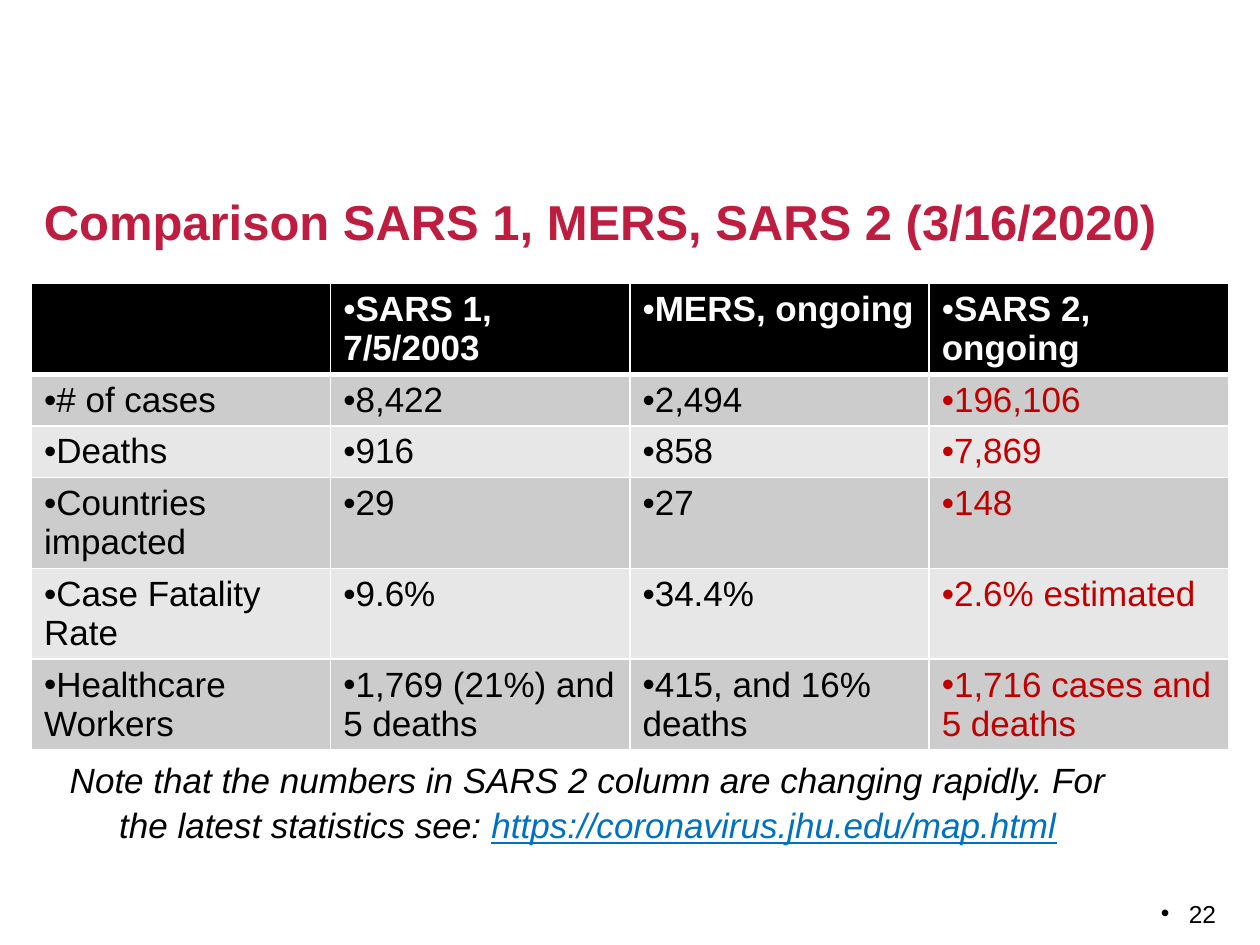
from dataclasses import dataclass
from typing import Optional

from lxml.etree import SubElement
from pptx import Presentation
from pptx.dml.color import RGBColor
from pptx.enum.text import MSO_ANCHOR, PP_ALIGN
from pptx.oxml.ns import qn
from pptx.slide import Slide
from pptx.table import _Cell
from pptx.text.text import _Paragraph
from pptx.util import Pt


@dataclass(frozen=True)
class Theme:
    font: str = "Arial"
    ink: str = "000000"
    paper: str = "FFFFFF"
    title: str = "BF1D40"
    alert: str = "C00000"
    link: str = "0070C0"
    bands: tuple[str, str] = ("CCCCCC", "E7E7E7")
    title_size: float = 28
    body_size: float = 20
    number_size: float = 14
    border: float = 1
    header_border: float = 3


@dataclass(frozen=True)
class Span:
    text: str
    color: str
    size: float
    bold: bool = False
    italic: bool = False
    underline: bool = False


@dataclass(frozen=True)
class TextBlock:
    left: float
    top: float
    width: float
    height: float
    spans: tuple[Span, ...]
    align: PP_ALIGN = PP_ALIGN.LEFT
    anchor: MSO_ANCHOR = MSO_ANCHOR.TOP
    line_spacing: float = 1.0
    bullet_indent: Optional[float] = None


THEME = Theme()
ROWS = (
    ("", "SARS 1, 7/5/2003", "MERS, ongoing", "SARS 2, ongoing"),
    ("# of cases", "8,422", "2,494", "196,106"),
    ("Deaths", "916", "858", "7,869"),
    ("Countries impacted", "29", "27", "148"),
    ("Case Fatality Rate", "9.6%", "34.4%", "2.6% estimated"),
    ("Healthcare Workers", "1,769 (21%) and 5 deaths", "415, and 16% deaths",
     "1,716 cases and 5 deaths"),
)
BLOCKS = (
    TextBlock(18, 90, 684, 72, (
        Span("Comparison SARS 1, MERS, SARS 2 (3/16/2020)", THEME.title,
             THEME.title_size, bold=True),
    ), anchor=MSO_ANCHOR.MIDDLE),
    TextBlock(30, 428.5, 612, 55.5, (
        Span("Note that the numbers in SARS 2 column are changing rapidly. "
             "For the latest statistics see: ", THEME.ink, THEME.body_size, italic=True),
        Span("https://coronavirus.jhu.edu/map.html", THEME.link, THEME.body_size,
             italic=True, underline=True),
    ), align=PP_ALIGN.CENTER, line_spacing=1.07),
    TextBlock(606, 510, 96, 18, (Span("22", THEME.ink, THEME.number_size),),
              align=PP_ALIGN.RIGHT, bullet_indent=16),
)


def add_bullet(para: _Paragraph, indent: float = 0) -> None:
    properties = para._p.get_or_add_pPr()
    properties.set("marL", str(Pt(indent)))
    properties.set("indent", str(-Pt(indent)))
    SubElement(properties, qn("a:buFont"), typeface=THEME.font)
    SubElement(properties, qn("a:buChar"), char="•")


def add_span(para: _Paragraph, span: Span) -> None:
    run = para.add_run()
    run.text = span.text
    font = run.font
    font.name, font.size = THEME.font, Pt(span.size)
    font.bold, font.italic, font.underline = span.bold, span.italic, span.underline
    font.color.rgb = RGBColor.from_string(span.color)


def add_text(page: Slide, block: TextBlock) -> None:
    box = page.shapes.add_textbox(
        Pt(block.left), Pt(block.top), Pt(block.width), Pt(block.height))
    frame = box.text_frame
    frame.word_wrap = True
    frame.vertical_anchor = block.anchor
    para = frame.paragraphs[0]
    if block.bullet_indent is not None:
        add_bullet(para, block.bullet_indent)
    para.alignment = block.align
    para.line_spacing = block.line_spacing
    for span in block.spans:
        add_span(para, span)


def set_borders(cell: _Cell, top: float, bottom: float) -> None:
    properties = cell._tc.get_or_add_tcPr()
    sides = {"L": THEME.border, "R": THEME.border, "T": top, "B": bottom}
    for side, width in sides.items():
        line = SubElement(properties, qn(f"a:ln{side}"), w=str(Pt(width)))
        fill = SubElement(line, qn("a:solidFill"))
        SubElement(fill, qn("a:srgbClr"), val=THEME.paper)


def fill_cell(cell: _Cell, text: str, row: int, is_latest: bool) -> None:
    is_header = row == 0
    set_borders(cell, THEME.header_border if row == 1 else THEME.border,
                THEME.header_border if is_header else THEME.border)
    cell.fill.solid()
    cell.fill.fore_color.rgb = RGBColor.from_string(
        THEME.ink if is_header else THEME.bands[(row - 1) % 2])
    para = cell.text_frame.paragraphs[0]
    if not text:
        para.font.size = Pt(THEME.body_size)
        return
    add_bullet(para)
    body_color = THEME.alert if is_latest else THEME.ink
    add_span(para, Span(text, THEME.paper if is_header else body_color,
                        THEME.body_size, bold=is_header))


def add_comparison(page: Slide) -> None:
    row_height, column_count = 29.5, len(ROWS[0])
    table = page.shapes.add_table(
        len(ROWS), column_count, Pt(18), Pt(162), Pt(684),
        Pt(row_height * len(ROWS))).table
    for row, texts in enumerate(ROWS):
        table.rows[row].height = Pt(row_height)
        for column, text in enumerate(texts):
            fill_cell(table.cell(row, column), text, row, column == column_count - 1)


def main() -> None:
    """Build the outbreak comparison slide."""
    deck = Presentation()
    deck.slide_width, deck.slide_height = Pt(720), Pt(540)
    page = deck.slides.add_slide(deck.slide_layouts[6])
    add_comparison(page)
    for block in BLOCKS:
        add_text(page, block)
    deck.save("out.pptx")


if __name__ == "__main__":
    main()
